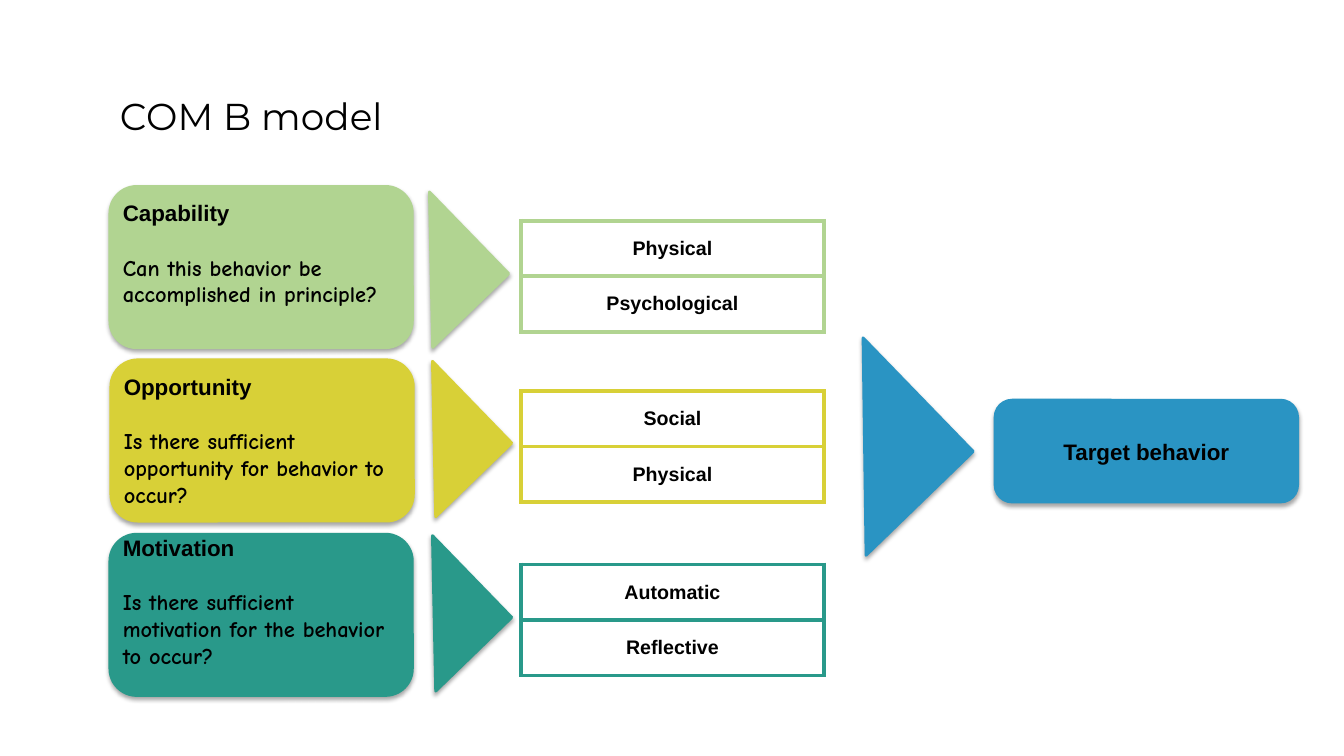
import dataclasses

import lxml.etree
import pptx
import pptx.dml.color
import pptx.enum.shapes
import pptx.enum.text
import pptx.oxml.ns
import pptx.util

Inches = pptx.util.Inches
Pt = pptx.util.Pt
RGBColor = pptx.dml.color.RGBColor
MSO_SHAPE = pptx.enum.shapes.MSO_SHAPE
PP_ALIGN = pptx.enum.text.PP_ALIGN
MSO_ANCHOR = pptx.enum.text.MSO_ANCHOR
qn = pptx.oxml.ns.qn

BLACK = RGBColor(0x00, 0x00, 0x00)
WHITE = RGBColor(0xFF, 0xFF, 0xFF)
GREEN = RGBColor(0xB1, 0xD4, 0x91)
YELLOW = RGBColor(0xD8, 0xD0, 0x37)
TEAL = RGBColor(0x29, 0x99, 0x8A)
BLUE = RGBColor(0x2A, 0x94, 0xC3)

HEADING_FONT = "Arial"
QUESTION_FONT = "Comic Neue"
TITLE_FONT = "Montserrat"
COLUMN_WIDTH = 3
CARD_HEIGHT = 1.6
ROW_HEIGHT = 0.55
PADDING = 0.05
BOTTOM_LINE = 0.27


@dataclasses.dataclass(frozen=True)
class Box:
    left: float
    top: float
    width: float
    height: float


@dataclasses.dataclass(frozen=True)
class Factor:
    name: str
    question: str
    kinds: tuple[str, ...]
    color: RGBColor
    card_left: float
    card_top: float
    pointer_left: float
    pointer_top: float
    kinds_top: float
    space_below: float


FACTORS = (
    Factor("Capability", "Can this behavior be accomplished in principle?",
           ("Physical", "Psychological"), GREEN,
           1.09, 1.85, 3.71, 2.15, 2.19, BOTTOM_LINE),
    Factor("Opportunity", "Is there sufficient opportunity for behavior to occur?",
           ("Social", "Physical"), YELLOW,
           1.1, 3.57, 3.74, 3.83, 3.88, 0),
    Factor("Motivation", "Is there sufficient motivation for the behavior to occur?",
           ("Automatic", "Reflective"), TEAL,
           1.09, 5.3, 3.74, 5.56, 5.6, BOTTOM_LINE),
)


def set_font(paragraph, name: str, size: float, bold: bool) -> None:
    paragraph.font.name = name
    paragraph.font.size = Pt(size)
    paragraph.font.bold = bold
    paragraph.font.color.rgb = BLACK


def add_shadow(shape) -> None:
    shape.shadow.inherit = False
    effects = shape.element.spPr.find(qn("a:effectLst"))
    shadow = lxml.etree.SubElement(
        effects, qn("a:outerShdw"), blurRad=str(Pt(3)), dist=str(Pt(1.8)),
        dir="5400000", rotWithShape="0")
    tint = lxml.etree.SubElement(shadow, qn("a:srgbClr"), val=str(BLACK))
    lxml.etree.SubElement(tint, qn("a:alpha"), val="35000")


def add_block(slide, kind, box: Box, color: RGBColor):
    block = slide.shapes.add_shape(
        kind, Inches(box.left), Inches(box.top), Inches(box.width), Inches(box.height))
    block.fill.solid()
    block.fill.fore_color.rgb = color
    block.line.color.rgb = color
    block.line.width = Pt(2)
    add_shadow(block)
    return block


def add_pointer(slide, box: Box, color: RGBColor) -> None:
    add_block(slide, MSO_SHAPE.RIGHT_TRIANGLE, box, color).rotation = 225.9


def add_card(slide, box: Box, color: RGBColor, heading: str, align,
             question: str = "", space_below: float = 0) -> None:
    card = add_block(slide, MSO_SHAPE.ROUNDED_RECTANGLE, box, color)
    frame = card.text_frame
    frame.word_wrap = True
    frame.vertical_anchor = MSO_ANCHOR.MIDDLE
    frame.margin_left = frame.margin_right = frame.margin_top = Inches(PADDING)
    frame.margin_bottom = Inches(PADDING + space_below)
    title = frame.paragraphs[0]
    title.text = heading
    title.alignment = align
    set_font(title, HEADING_FONT, 16, True)
    if question:
        body = frame.add_paragraph()
        body.text = question
        body.alignment = align
        body.space_before = Pt(19.5)
        set_font(body, QUESTION_FONT, 16, True)


def add_kinds(slide, factor: Factor) -> None:
    graphic = slide.shapes.add_table(
        len(factor.kinds), 1, Inches(5.17), Inches(factor.kinds_top),
        Inches(COLUMN_WIDTH), Inches(ROW_HEIGHT * len(factor.kinds)))
    table = graphic.table
    table.first_row = False
    table.horz_banding = False
    for cell, kind in zip(table.iter_cells(), factor.kinds):
        cell.text = kind
        cell.vertical_anchor = MSO_ANCHOR.MIDDLE
        paragraph = cell.text_frame.paragraphs[0]
        paragraph.alignment = PP_ALIGN.CENTER
        set_font(paragraph, HEADING_FONT, 14, True)
    for properties in graphic.element.iter(qn("a:tcPr")):
        for side in ("a:lnL", "a:lnR", "a:lnT", "a:lnB"):
            border = lxml.etree.SubElement(properties, qn(side), w=str(Pt(3)))
            fill = lxml.etree.SubElement(border, qn("a:solidFill"))
            lxml.etree.SubElement(fill, qn("a:srgbClr"), val=str(factor.color))
    for cell in table.iter_cells():
        cell.fill.solid()
        cell.fill.fore_color.rgb = WHITE


def add_title(slide, text: str) -> None:
    title = slide.shapes.add_textbox(Inches(1.09), Inches(0.87), Inches(6.67), Inches(0.55))
    title.text_frame.word_wrap = True
    paragraph = title.text_frame.paragraphs[0]
    paragraph.text = text
    set_font(paragraph, TITLE_FONT, 26.7, False)


def main() -> None:
    presentation = pptx.Presentation()
    presentation.slide_width = Inches(13.33)
    presentation.slide_height = Inches(7.5)
    slide = presentation.slides.add_slide(presentation.slide_layouts[6])

    add_title(slide, "COM B model")
    for factor in FACTORS:
        add_card(slide, Box(factor.card_left, factor.card_top, COLUMN_WIDTH, CARD_HEIGHT),
                 factor.color, factor.name, PP_ALIGN.LEFT,
                 factor.question, factor.space_below)
        add_pointer(slide, Box(factor.pointer_left, factor.pointer_top, 1.13, 1.05),
                    factor.color)
        add_kinds(slide, factor)
    add_pointer(slide, Box(7.79, 3.69, 1.57, 1.48), BLUE)
    add_card(slide, Box(9.87, 3.97, COLUMN_WIDTH, 1.01), BLUE,
             "Target behavior", PP_ALIGN.CENTER)

    presentation.save("out.pptx")


if __name__ == "__main__":
    main()
